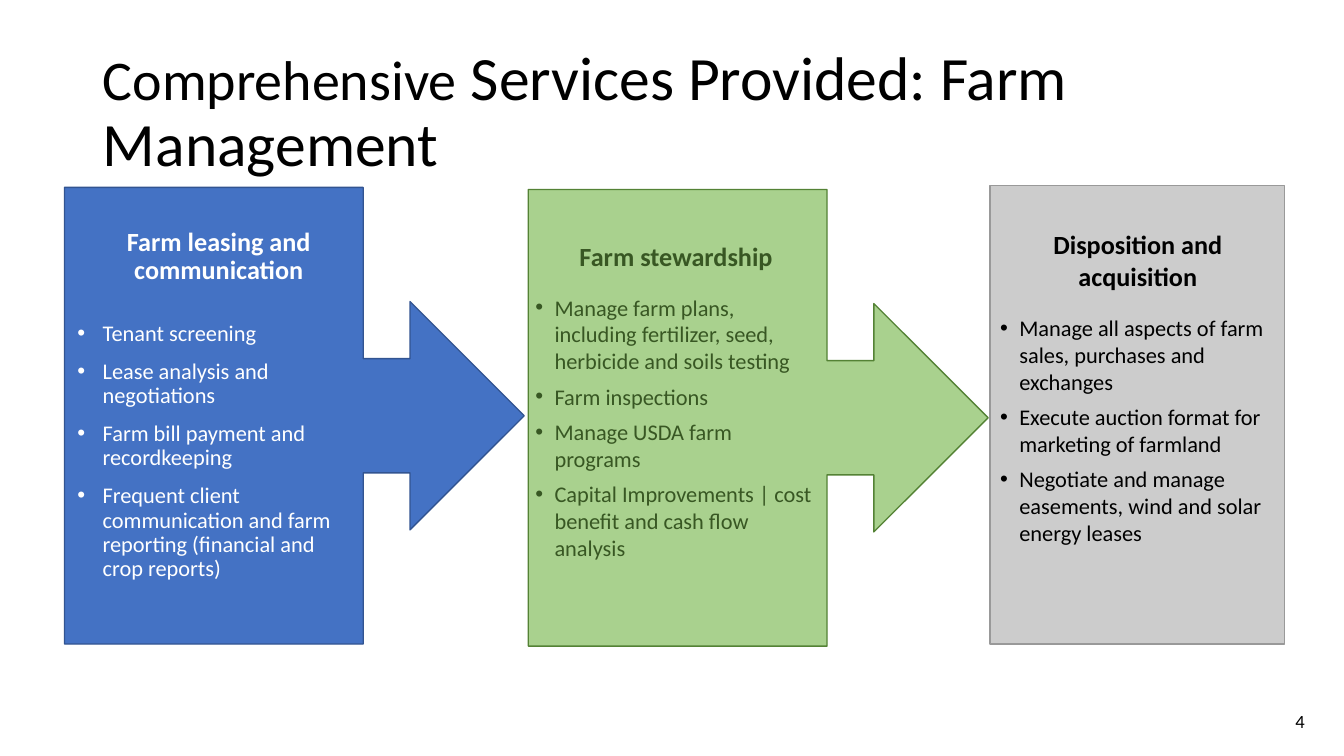
from dataclasses import dataclass

from lxml import etree
from pptx import Presentation
from pptx.dml.color import RGBColor
from pptx.enum.shapes import MSO_SHAPE as Shape
from pptx.enum.text import MSO_ANCHOR as Anchor, MSO_AUTO_SIZE as AutoSize, PP_ALIGN as Align
from pptx.oxml.ns import qn
from pptx.util import Inches, Pt


@dataclass(frozen=True)
class Theme:
    font: str = "Calibri"
    black: str = "000000"
    white: str = "FFFFFF"
    blue: str = "4472C4"
    blue_edge: str = "325491"
    green: str = "A9D18E"
    green_edge: str = "548235"
    green_text: str = "385723"
    grey: str = "CCCCCC"
    grey_edge: str = "999999"
    title_lead: float = 40
    title: float = 44
    heading: float = 18.7
    body: float = 16
    page: float = 13.3


theme = Theme()


def style(run, size, color, bold=False):
    run.font.name = theme.font
    run.font.size = Pt(size)
    run.font.bold = bold
    run.font.color.rgb = RGBColor.from_string(color)


def add_bullet(paragraph, indent, hanging):
    properties = paragraph._p.get_or_add_pPr()
    properties.set("marL", str(Inches(indent)))
    properties.set("indent", str(-Inches(hanging)))
    etree.SubElement(properties, qn("a:buFont")).set("typeface", "Arial")
    etree.SubElement(properties, qn("a:buChar")).set("char", "•")


services = [
    dict(shape=Shape.RIGHT_ARROW_CALLOUT, box=(0.64, 1.86, 4.56, 4.53),
         fill=theme.blue, edge=theme.blue_edge, ink=theme.white,
         text_box=(0.67, 2.22, 3, 3.71), insets=(0.1, 0.05), indents=(0.25, 0.25),
         line=0.9, before=10, after=0,
         heading="Farm leasing and communication",
         points=["Tenant screening",
                 "Lease analysis and negotiations",
                 "Farm bill payment and recordkeeping",
                 "Frequent client communication and farm reporting (financial and crop reports)"]),
    dict(shape=Shape.RIGHT_ARROW_CALLOUT, box=(5.24, 1.88, 4.56, 4.53),
         fill=theme.green, edge=theme.green_edge, ink=theme.green_text,
         text_box=(5.23, 2.31, 2.95, 4.05), insets=(0.07, 0.07), indents=(0.2, 0.19),
         line=1.0, before=0, after=6,
         heading="Farm stewardship",
         points=["Manage farm plans, including fertilizer, seed, herbicide and soils testing",
                 "Farm inspections",
                 "Manage USDA farm programs",
                 "Capital Improvements | cost benefit and cash flow analysis"]),
    dict(shape=Shape.RECTANGLE, box=(9.82, 1.84, 2.92, 4.55),
         fill=theme.grey, edge=theme.grey_edge, ink=theme.black,
         text_box=(9.84, 2.2, 2.89, 3.27), insets=(0.07, 0.07), indents=(0.2, 0.19),
         line=1.0, before=0, after=6,
         heading="Disposition and acquisition",
         points=["Manage all aspects of farm sales, purchases and exchanges",
                 "Execute auction format for marketing of farmland",
                 "Negotiate and manage easements, wind and solar energy leases"]),
]

deck = Presentation()
deck.slide_width, deck.slide_height = Inches(13.33), Inches(7.5)
slide = deck.slides.add_slide(deck.slide_layouts[5])

title = slide.shapes.title
title.left, title.top, title.width, title.height = map(Inches, (0.92, 0.4, 11.5, 1.45))
title.text_frame.auto_size = AutoSize.NONE
title.text_frame.vertical_anchor = Anchor.MIDDLE
title_line = title.text_frame.paragraphs[0]
title_line.alignment = Align.LEFT
title_line.line_spacing = 0.9
for words, size in [("Comprehensive", theme.title_lead),
                    (" Services Provided: Farm Management", theme.title)]:
    title_run = title_line.add_run()
    title_run.text = words
    style(title_run, size, theme.black)

for service in services:
    panel = slide.shapes.add_shape(service["shape"], *map(Inches, service["box"]))
    panel.shadow.inherit = False
    panel.fill.solid()
    panel.fill.fore_color.rgb = RGBColor.from_string(service["fill"])
    panel.line.color.rgb = RGBColor.from_string(service["edge"])
    panel.line.width = Pt(1)

for service in services:
    frame = slide.shapes.add_textbox(*map(Inches, service["text_box"])).text_frame
    frame.word_wrap = True
    side, end = map(Inches, service["insets"])
    frame.margin_left = frame.margin_right = side
    frame.margin_top = frame.margin_bottom = end
    frame.text = "\n".join([service["heading"], *service["points"]])
    heading, *points = frame.paragraphs
    for paragraph in frame.paragraphs:
        paragraph.line_spacing = service["line"]
        paragraph.space_before = Pt(service["before"])
        paragraph.space_after = Pt(service["after"])
    heading.alignment = Align.CENTER
    heading.space_after = Pt(16)
    style(heading.runs[0], theme.heading, service["ink"], bold=True)
    for point in points:
        add_bullet(point, *service["indents"])
        style(point.runs[0], theme.body, service["ink"])

page_number = slide.shapes.add_textbox(*map(Inches, (12.75, 6.99, 0.3, 0.33))).text_frame
page_number.word_wrap = False
page_number.auto_size = AutoSize.SHAPE_TO_FIT_TEXT
page_number.text = "4"
style(page_number.paragraphs[0].runs[0], theme.page, theme.black)

deck.save("out.pptx")
